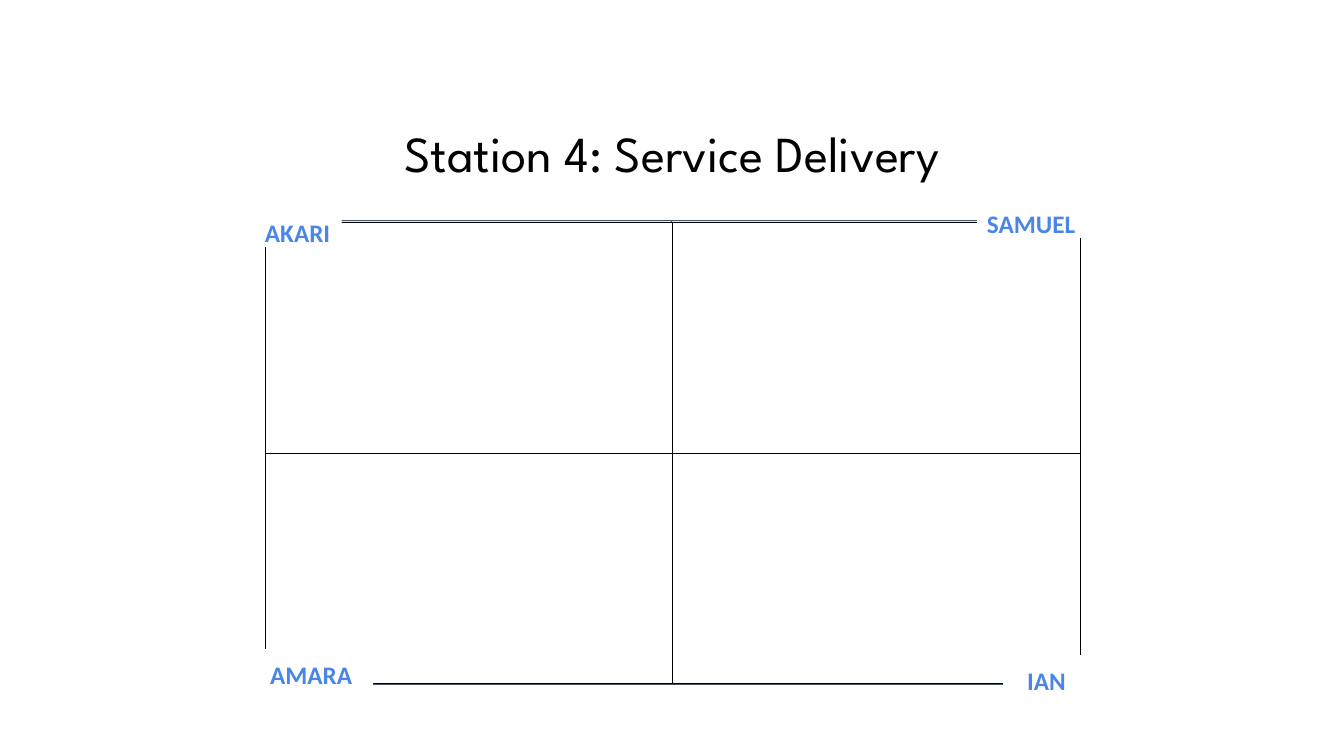
from dataclasses import dataclass

from pptx import Presentation
from pptx.dml.color import RGBColor
from pptx.enum.shapes import MSO_CONNECTOR, MSO_SHAPE
from pptx.enum.text import MSO_ANCHOR, PP_ALIGN
from pptx.oxml.ns import qn
from pptx.util import Inches, Pt

RECT = MSO_SHAPE.RECTANGLE
STRAIGHT = MSO_CONNECTOR.STRAIGHT
TOP, MIDDLE = MSO_ANCHOR.TOP, MSO_ANCHOR.MIDDLE
LEFT, CENTER = PP_ALIGN.LEFT, PP_ALIGN.CENTER


@dataclass(frozen=True)
class Theme:
    black: RGBColor = RGBColor(0, 0, 0)
    white: RGBColor = RGBColor(255, 255, 255)
    gray: RGBColor = RGBColor(0xE7, 0xE6, 0xE6)
    slate: RGBColor = RGBColor(0x44, 0x54, 0x6A)
    blue: RGBColor = RGBColor(0x4A, 0x86, 0xE8)
    head_font: str = "League Spartan"
    name_font: str = "Calibri"
    head_size: float = 36
    name_size: float = 18
    line: float = 0.75


@dataclass(frozen=True)
class Box:
    left: float
    top: float
    width: float
    height: float

    def lengths(self) -> list:
        return [Inches(v) for v in (self.left, self.top, self.width, self.height)]


@dataclass(frozen=True)
class Label:
    text: str
    box: Box
    align: PP_ALIGN = LEFT


THEME = Theme()
FRAME = Box(2.63, 2.19, 8.06, 4.6)
CELL = Box(2.63, 2.21, 4.05, 2.29)
STEP_X, STEP_Y = 4.04, 2.28
LABELS = [
    Label("AKARI", Box(2.53, 2.06, 0.86, 0.39)),
    Label("SAMUEL", Box(9.69, 1.97, 1.12, 0.39)),
    Label("AMARA", Box(2.58, 6.44, 1.12, 0.39)),
    Label("IAN", Box(9.95, 6.5, 0.86, 0.39), CENTER),
]


def set_font(para, name: str, size: float, color: RGBColor, bold: bool) -> None:
    para.font.name = name
    para.font.size = Pt(size)
    para.font.color.rgb = color
    para.font.bold = bold


def add_rect(slide, box: Box, fill: RGBColor, line: RGBColor | None = None):
    rect = slide.shapes.add_shape(RECT, *box.lengths())
    rect.shadow.inherit = False
    rect.fill.solid()
    rect.fill.fore_color.rgb = fill
    if line is None:
        rect.line.fill.background()
    else:
        rect.line.color.rgb = line
        rect.line.width = Pt(THEME.line)
    return rect


def add_line(slide, rect, start: int, end: int) -> None:
    """Join two side middles of a rectangle."""
    line = slide.shapes.add_connector(STRAIGHT, 0, 0, 0, 0)
    line.begin_connect(rect, start)
    line.end_connect(rect, end)
    line.line.color.rgb = THEME.slate
    line.line.width = Pt(THEME.line)
    props = line._element.spPr
    props.append(props.makeelement(qn("a:effectLst"), {}))


def add_label(slide, label: Label) -> None:
    frame = add_rect(slide, label.box, THEME.white).text_frame
    frame.margin_left = frame.margin_right = Inches(0.1)
    frame.margin_top = frame.margin_bottom = Inches(0.1)
    frame.vertical_anchor = TOP
    frame.word_wrap = True
    para = frame.paragraphs[0]
    para.text = label.text
    para.alignment = label.align
    set_font(para, THEME.name_font, THEME.name_size, THEME.blue, True)


def add_title(slide, text: str) -> None:
    title = slide.shapes.title
    title.left, title.top, title.width, title.height = Box(2.53, 1.2, 8.27, 0.62).lengths()
    frame = title.text_frame
    frame.vertical_anchor = MIDDLE
    para = frame.paragraphs[0]
    para.text = text
    para.alignment = CENTER
    set_font(para, THEME.head_font, THEME.head_size, THEME.black, False)


def main() -> None:
    deck = Presentation()
    deck.slide_width, deck.slide_height = Inches(13.33), Inches(7.5)
    slide = deck.slides.add_slide(deck.slide_layouts[5])
    add_title(slide, "Station 4: Service Delivery")

    # Frame with its cross
    frame = add_rect(slide, FRAME, THEME.gray, THEME.slate)
    add_line(slide, frame, 0, 2)
    add_line(slide, frame, 1, 3)

    # Four cells, lower row first
    for row in (1, 0):
        for col in (0, 1):
            box = Box(CELL.left + col * STEP_X, CELL.top + row * STEP_Y,
                      CELL.width, CELL.height)
            add_rect(slide, box, THEME.white, THEME.black)

    # Names over the corners
    for label in LABELS:
        add_label(slide, label)

    deck.save("out.pptx")


if __name__ == "__main__":
    main()
